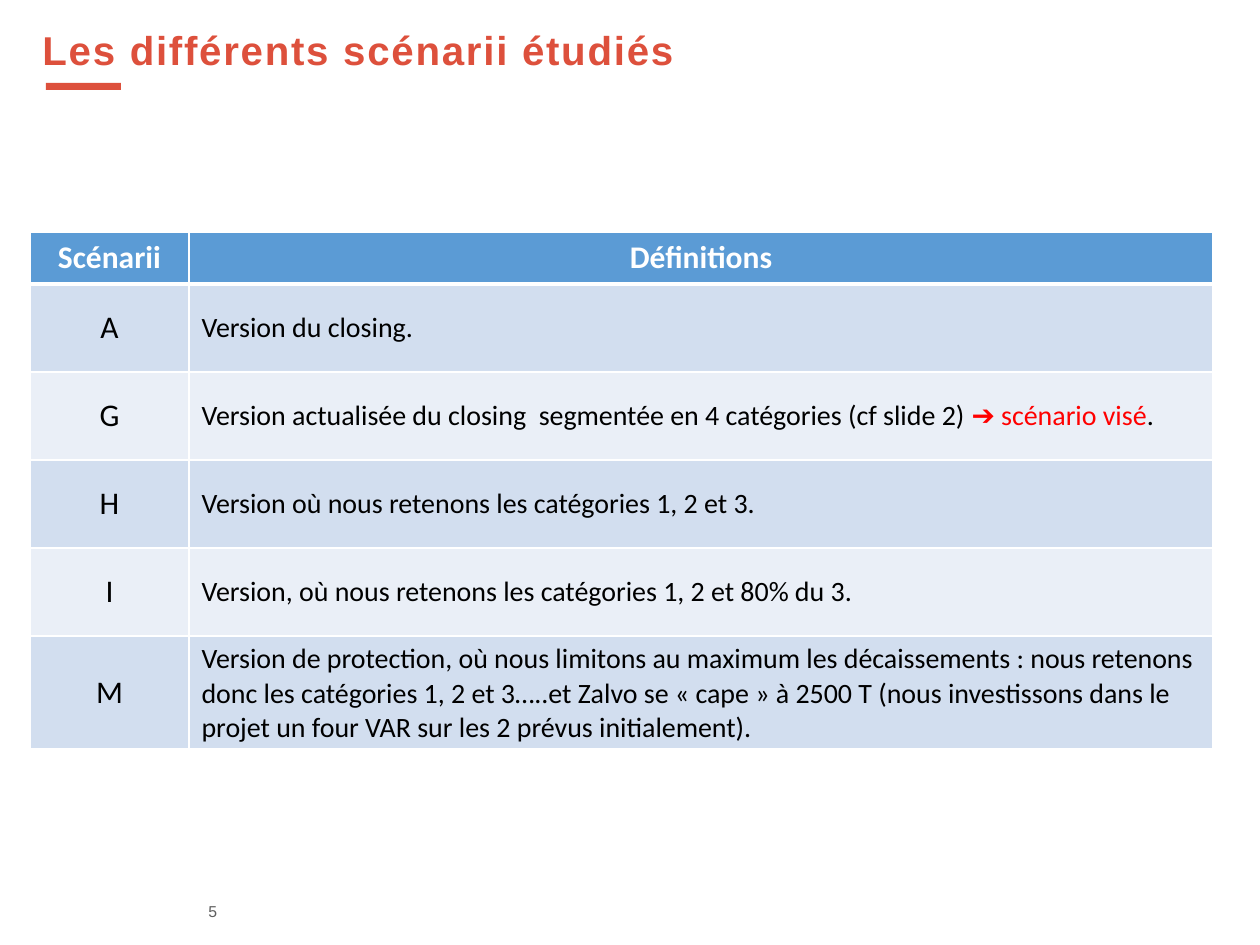
from lxml import etree
from pptx import Presentation
from pptx import util as u
from pptx.dml.color import RGBColor
from pptx.enum import shapes, text
from pptx.oxml.ns import qn

COLORS = {"accent": "DD503C", "header": "5B9BD5", "band": "D2DEEF", "light": "EAEFF7",
          "white": "FFFFFF", "black": "000000", "red": "FF0000", "grey": "5F5F5F"}


def px(n):
    return round(n * 914400 / 126)


def style(font, name, size, color, bold=False):
    font.name, font.size, font.bold = name, u.Pt(size), bold
    font.color.rgb = RGBColor.from_string(COLORS[color])


prs = Presentation()
prs.slide_width, prs.slide_height = px(1260), px(945)
s = prs.slides.add_slide(prs.slide_layouts[6])

# Title and page number
for words, box, size, color, bold, anchor in [
    ("Les différents scénarii étudiés", (30, 25, 1087, 91), 23, "accent", True, "TOP"),
    ("5", (196, 900, 47, 23), 9, "grey", False, "MIDDLE"),
]:
    tf = s.shapes.add_textbox(*map(px, box)).text_frame
    tf.word_wrap = True
    tf.vertical_anchor = text.MSO_ANCHOR[anchor]
    p = tf.paragraphs[0]
    r = p.add_run()
    r.text = words
    style(p.font, "Arial", size, color, bold)
    if bold:
        p.line_spacing = 0.9
        r.font._element.set("spc", "100")

# Bar under the title
sp = s.shapes.add_shape(shapes.MSO_SHAPE.RECTANGLE, px(46), px(83), px(75), px(7))
sp.shadow.inherit = False
sp.fill.solid()
sp.fill.fore_color.rgb = RGBColor.from_string(COLORS["accent"])
sp.line.fill.background()

# Scenario table: each definition is a list of (text, color) runs
rows = [
    ("Scénarii", [("Définitions", "white")]),
    ("A", [("Version du closing.", "black")]),
    ("G", [("Version actualisée du closing  segmentée en 4 catégories (cf slide 2) ", "black"),
           ("➔ scénario visé", "red"), (".", "black")]),
    ("H", [("Version où nous retenons les catégories 1, 2 et 3.", "black")]),
    ("I", [("Version, où nous retenons les catégories 1, 2 et 80% du 3.", "black")]),
    ("M", [("Version de protection, où nous limitons au maximum les décaissements : nous "
            "retenons donc les catégories 1, 2 et 3…..et Zalvo se « cape » à 2500 T (nous "
            "investissons dans le projet un four VAR sur les 2 prévus initialement).", "black")]),
]
table = s.shapes.add_table(len(rows), 2, px(30), px(232), px(1183), px(492)).table
table.columns[0].width, table.columns[1].width = px(159), px(1024)

for i, (name, definition) in enumerate(rows):
    header = i == 0
    table.rows[i].height = px(52 if header else 88)
    fill = "header" if header else "band" if i % 2 else "light"
    for j, runs in enumerate([[(name, "white" if header else "black")], definition]):
        cell = table.cell(i, j)
        cell.vertical_anchor = text.MSO_ANCHOR.MIDDLE
        # White borders, thicker under the header
        tcPr = cell._tc.get_or_add_tcPr()
        for side in "LRTB":
            thick = (i, side) in [(0, "B"), (1, "T")]
            ln = etree.SubElement(tcPr, qn("a:ln" + side), w=str(u.Pt(3 if thick else 1)))
            solid = etree.SubElement(ln, qn("a:solidFill"))
            etree.SubElement(solid, qn("a:srgbClr"), val=COLORS["white"])
        cell.fill.solid()
        cell.fill.fore_color.rgb = RGBColor.from_string(COLORS[fill])
        p = cell.text_frame.paragraphs[0]
        centred = header or j == 0
        p.alignment = text.PP_ALIGN.CENTER if centred else text.PP_ALIGN.LEFT
        for words, color in runs:
            r = p.add_run()
            r.text = words
            style(r.font, "Calibri", 18 if centred else 16, color, header)

prs.save("out.pptx")
